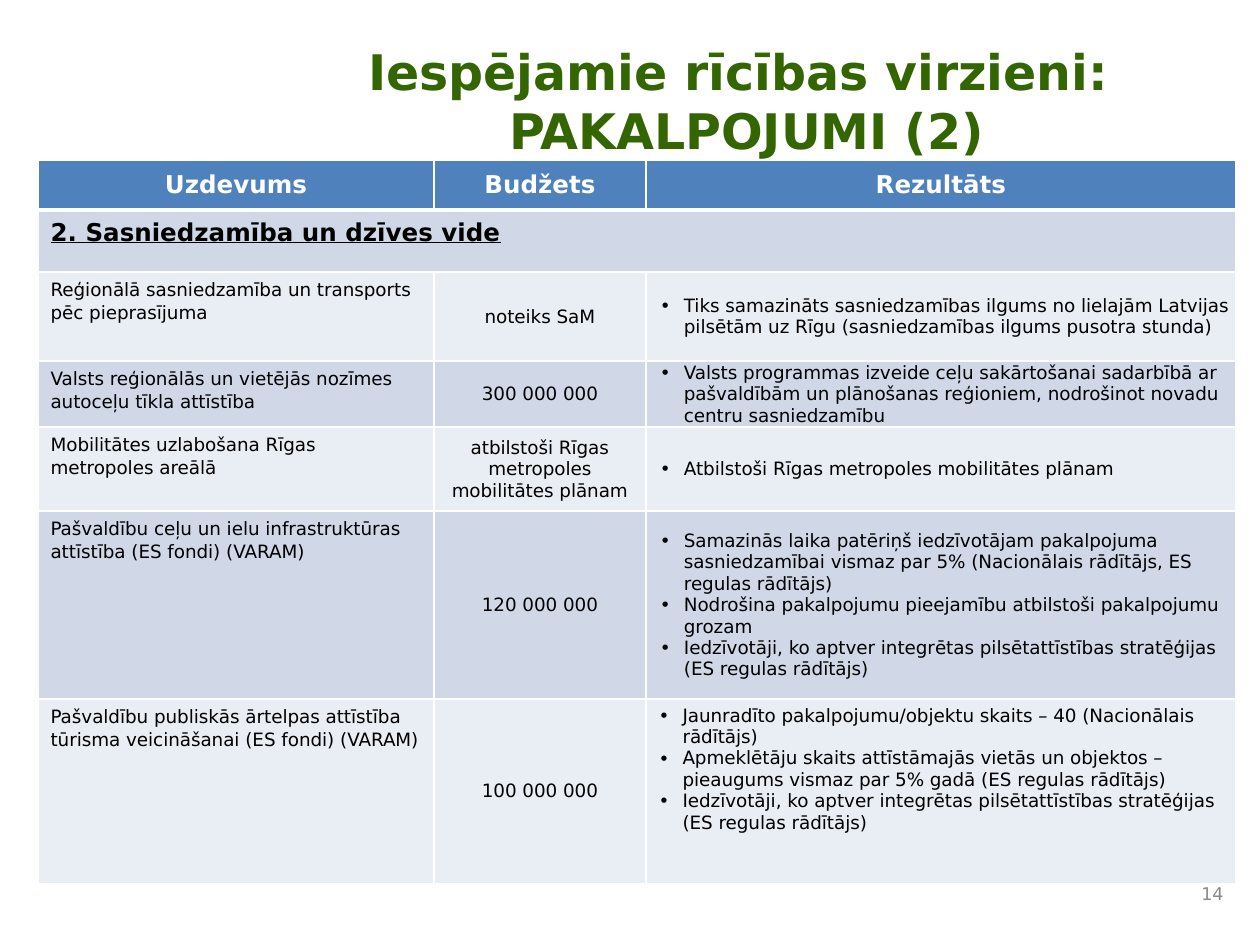
from lxml.etree import SubElement
from pptx import Presentation
from pptx.dml.color import RGBColor
from pptx.enum.text import MSO_ANCHOR, MSO_AUTO_SIZE, PP_ALIGN
from pptx.oxml import parse_xml
from pptx.oxml.ns import nsdecls, qn
from pptx.util import Emu, Pt

COLORS = {
    "title": "336600",
    "header": "4F81BD",
    "band_dark": "D0D8E8",
    "band_light": "E9EDF4",
    "white": "FFFFFF",
    "text": "000000",
    "page_number": "898989",
}
COLUMN_WIDTHS = [396, 212, 590]
ROW_HEIGHTS = [50, 62, 89, 66, 84, 188, 185]
HEADERS = ["Uzdevums", "Budžets", "Rezultāts"]
SECTION = "2. Sasniedzamība un dzīves vide"
STRATEGIES = "Iedzīvotāji, ko aptver integrētas pilsētattīstības stratēģijas (ES regulas rādītājs)"
TASKS = [
    (
        "Reģionālā sasniedzamība un transports pēc pieprasījuma",
        "noteiks SaM",
        ["Tiks samazināts sasniedzamības ilgums no lielajām Latvijas pilsētām uz Rīgu (sasniedzamības ilgums pusotra stunda)"],
    ),
    (
        "Valsts reģionālās un vietējās nozīmes autoceļu tīkla attīstība",
        "300 000 000",
        ["Valsts programmas izveide ceļu sakārtošanai sadarbībā ar pašvaldībām un plānošanas reģioniem, nodrošinot novadu centru sasniedzamību"],
    ),
    (
        "Mobilitātes uzlabošana Rīgas metropoles areālā",
        "atbilstoši Rīgas metropoles mobilitātes plānam",
        ["Atbilstoši Rīgas metropoles mobilitātes plānam"],
    ),
    (
        "Pašvaldību ceļu un ielu infrastruktūras attīstība (ES fondi) (VARAM)",
        "120 000 000",
        [
            "Samazinās laika patēriņš iedzīvotājam pakalpojuma sasniedzamībai vismaz par 5% (Nacionālais rādītājs, ES regulas rādītājs)",
            "Nodrošina pakalpojumu pieejamību atbilstoši pakalpojumu grozam",
            STRATEGIES,
        ],
    ),
    (
        "Pašvaldību publiskās ārtelpas attīstība tūrisma veicināšanai (ES fondi) (VARAM)",
        "100 000 000",
        [
            "Jaunradīto pakalpojumu/objektu skaits – 40 (Nacionālais rādītājs)",
            "Apmeklētāju skaits attīstāmajās vietās un objektos – pieaugums vismaz par 5% gadā (ES regulas rādītājs)",
            STRATEGIES,
        ],
    ),
]


def px(length):
    return Emu(round(length * 914400 / 126))


class SlideBuilder:
    font_name = "DejaVu Sans"

    def __init__(self, presentation):
        self.slide = presentation.slides.add_slide(presentation.slide_layouts[5])

    def format_runs(self, paragraph, size, color, bold=False, underline=False):
        for run in paragraph.runs:
            run.font.name = self.font_name
            run.font.size = Pt(size)
            run.font.bold = bold
            run.font.underline = underline
            run.font.color.rgb = RGBColor.from_string(COLORS[color])

    def fill_text(self, shape, text, align, size, color, bold=False):
        frame = shape.text_frame
        frame.text = text
        frame.word_wrap = True
        frame.auto_size = MSO_AUTO_SIZE.NONE
        frame.vertical_anchor = MSO_ANCHOR.MIDDLE
        paragraph = frame.paragraphs[0]
        paragraph.alignment = align
        self.format_runs(paragraph, size, color, bold)

    def title(self, text, left, top, width, height):
        shape = self.slide.shapes.title
        shape.left, shape.top, shape.width, shape.height = map(px, (left, top, width, height))
        self.fill_text(shape, text, PP_ALIGN.CENTER, 28, "title", True)

    def text_box(self, text, left, top, width, height):
        shape = self.slide.shapes.add_textbox(*map(px, (left, top, width, height)))
        self.fill_text(shape, text, PP_ALIGN.RIGHT, 10, "page_number")

    def table(self, left, top, widths, heights):
        bounds = map(px, (left, top, sum(widths), sum(heights)))
        table = self.slide.shapes.add_table(len(heights), len(widths), *bounds).table
        for column, width in zip(table.columns, widths):
            column.width = px(width)
        for row, height in zip(table.rows, heights):
            row.height = px(height)
        return table

    def borders(self, cell, bottom):
        properties = cell._tc.get_or_add_tcPr()
        for index, side in enumerate("LRTB"):
            width = Pt(bottom if side == "B" else 1)
            properties.insert(index, parse_xml(
                f'<a:ln{side} {nsdecls("a")} w="{width}"><a:solidFill>'
                f'<a:srgbClr val="{COLORS["white"]}"/></a:solidFill></a:ln{side}>'
            ))

    def cell(self, cell, texts, fill, size=10.5, color="text", bold=False, underline=False,
             align=PP_ALIGN.LEFT, anchor=MSO_ANCHOR.TOP, spacing=None, tight=False,
             bullet_indent=None, bottom=1):
        cell.fill.solid()
        cell.fill.fore_color.rgb = RGBColor.from_string(COLORS[fill])
        cell.vertical_anchor = anchor
        if tight:
            cell.margin_left = cell.margin_right = cell.margin_top = px(1)
            cell.margin_bottom = 0
        self.borders(cell, bottom)
        cell.text_frame.text = "\n".join(texts)
        for paragraph in cell.text_frame.paragraphs:
            paragraph.alignment = align
            if spacing:
                paragraph.line_spacing = spacing
            if bullet_indent:
                self.bullet(paragraph, bullet_indent)
            self.format_runs(paragraph, size, color, bold, underline)

    def bullet(self, paragraph, indent):
        properties = paragraph._p.get_or_add_pPr()
        properties.set("marL", str(px(indent)))
        properties.set("indent", str(px(-24)))
        SubElement(properties, qn("a:buFont")).set("typeface", self.font_name)
        SubElement(properties, qn("a:buChar")).set("char", "•")


def main():
    presentation = Presentation()
    presentation.slide_width, presentation.slide_height = px(1260), px(945)
    builder = SlideBuilder(presentation)
    builder.title("Iespējamie rīcības virzieni: \vPAKALPOJUMI (2)", 304, 25, 885, 151)

    table = builder.table(38, 160, COLUMN_WIDTHS, ROW_HEIGHTS)
    centered = {"align": PP_ALIGN.CENTER, "anchor": MSO_ANCHOR.MIDDLE}
    for column, header in enumerate(HEADERS):
        builder.cell(table.cell(0, column), [header], "header", size=14, color="white",
                     bold=True, bottom=3, **centered)

    table.cell(1, 0).merge(table.cell(1, 2))
    builder.cell(table.cell(1, 0), [SECTION], "band_dark", size=14, bold=True,
                 underline=True, spacing=1.07)

    for row, (task, budget, results) in enumerate(TASKS, start=2):
        fill = "band_dark" if row % 2 else "band_light"
        tight = row < len(ROW_HEIGHTS) - 1
        builder.cell(table.cell(row, 0), [task], fill, spacing=1.07)
        builder.cell(table.cell(row, 1), [budget], fill, tight=tight, **centered)
        builder.cell(table.cell(row, 2), results, fill, tight=tight,
                     anchor=MSO_ANCHOR.MIDDLE if tight else MSO_ANCHOR.TOP,
                     bullet_indent=37 if tight else 24)

    builder.text_box("14", 1176, 872, 60, 42)
    presentation.save("out.pptx")


if __name__ == "__main__":
    main()
